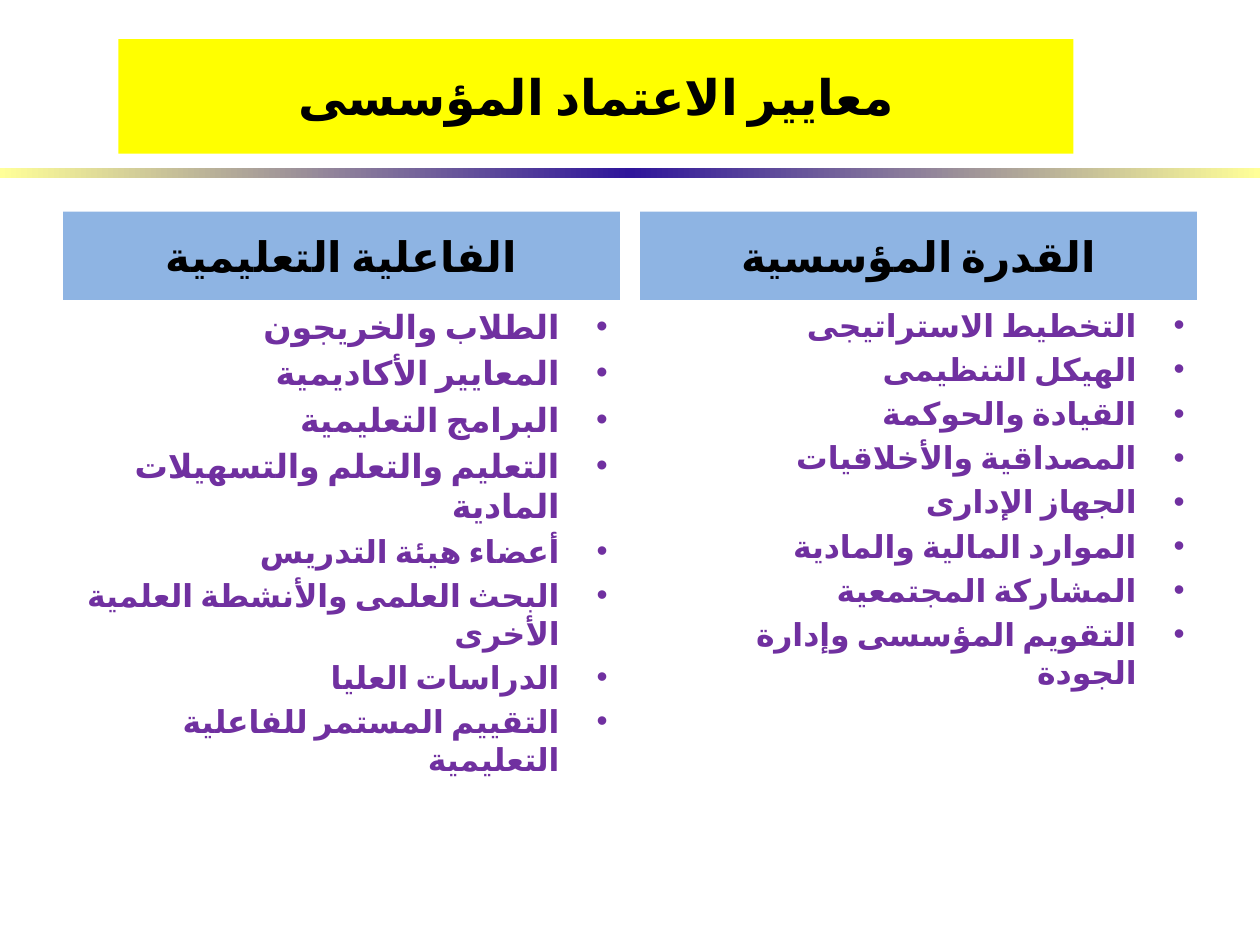
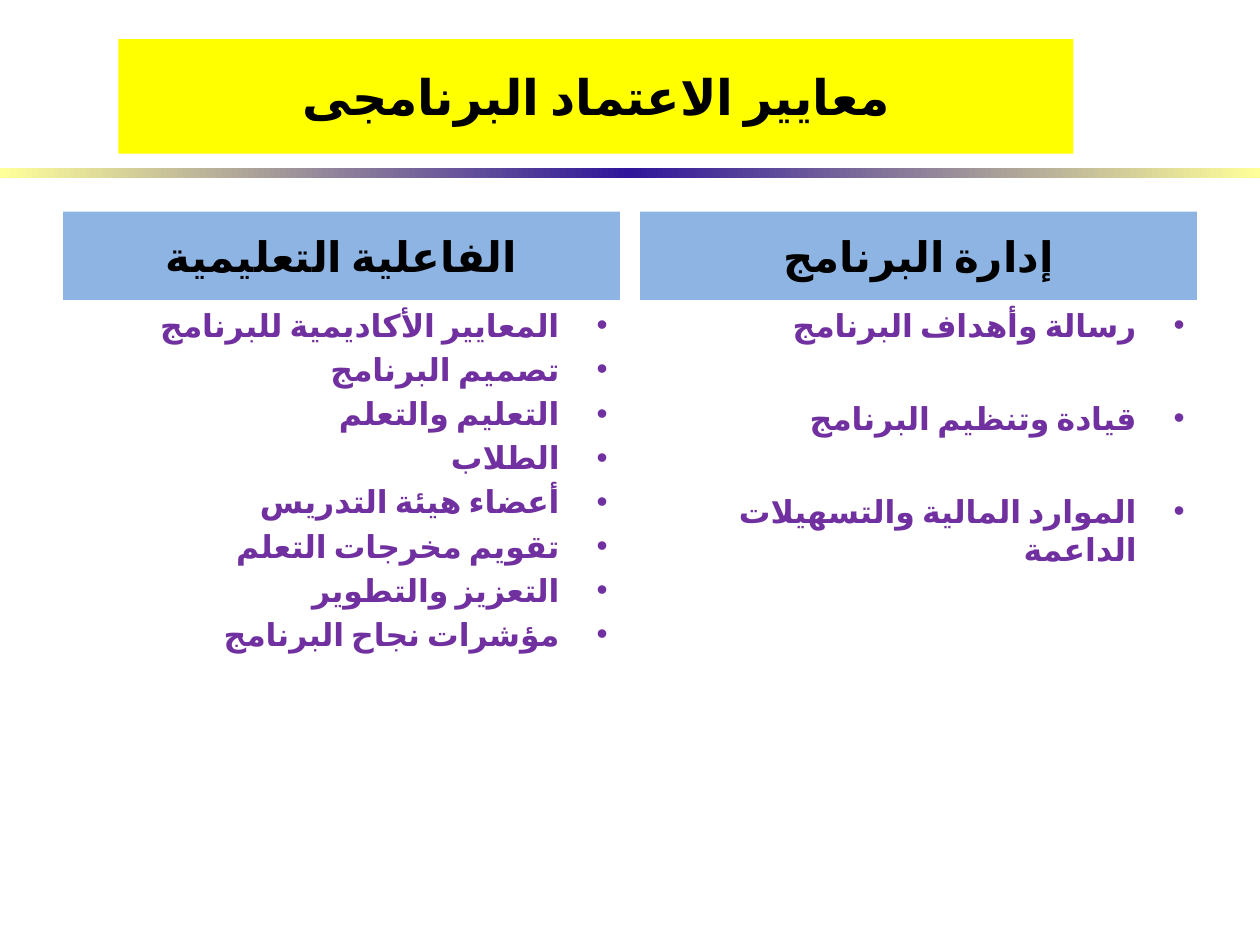
from copy import deepcopy
from dataclasses import dataclass

from lxml.etree import SubElement
from pptx import Presentation
from pptx.dml.color import RGBColor
from pptx.enum.shapes import MSO_SHAPE
from pptx.enum.text import MSO_ANCHOR, MSO_AUTO_SIZE, PP_ALIGN
from pptx.oxml.ns import qn
from pptx.util import Inches, Pt


@dataclass(frozen=True)
class Theme:
    font: str = "Calibri"
    language: str = "ar-EG"
    title_fill: str = "FFFF00"
    heading_fill: str = "8EB4E3"
    dark: str = "000000"
    item: str = "7030A0"
    rule: tuple = ("FFFF99", "2F169A", "FFFF99")
    title_size: int = 28
    heading_size: int = 24
    item_size: int = 18
    large_item_size: int = 19


@dataclass(frozen=True)
class Box:
    left: float
    top: float
    width: float
    height: float

    def emu(self):
        return [Inches(v) for v in (self.left, self.top, self.width, self.height)]


THEME = Theme()
SLIDE_W, SLIDE_H = 10, 7.5
MARGIN, GUTTER = 0.5, 0.16
COLUMN_W = (SLIDE_W - 2 * MARGIN - GUTTER) / 2
COLUMN_TOP, COLUMN_H, HEADING_H = 1.68, 5.03, 0.7
TITLE_BOX = Box(0.94, 0.31, 7.58, 0.91)
RULE_BOX = Box(0, 1.33, SLIDE_W, 0.08)
INDENT = 0.38
LINE_GAP = 0.2   # space before an item, as a share of its size
WIDE_GAP = 31.5  # points between items of a sparse list


def add_run(p, text, size, color):
    r = p.add_run()
    r.text = text
    r.font.size, r.font.bold = Pt(size), True
    r.font.color.rgb = RGBColor.from_string(color)
    r.font.name = THEME.font
    rPr = r.font._element
    rPr.set("lang", THEME.language)
    SubElement(rPr, qn("a:cs")).set("typeface", THEME.font)


def set_rtl(p, align):
    p.alignment = align
    p._p.get_or_add_pPr().set("rtl", "1")


def fill_band(sp, color, text, size):
    """Solid band with one centred line of text."""
    sp.fill.solid()
    sp.fill.fore_color.rgb = RGBColor.from_string(color)
    sp.line.fill.background()
    tf = sp.text_frame
    tf.word_wrap, tf.auto_size = True, MSO_AUTO_SIZE.NONE
    tf.vertical_anchor = MSO_ANCHOR.MIDDLE
    p = tf.paragraphs[0]
    set_rtl(p, PP_ALIGN.CENTER)
    add_run(p, text, size, THEME.dark)


def add_rect(s, box):
    sp = s.shapes.add_shape(MSO_SHAPE.RECTANGLE, *box.emu())
    sp.shadow.inherit = False
    return sp


def add_title(s, text):
    title = s.shapes.title
    title.left, title.top, title.width, title.height = TITLE_BOX.emu()
    fill_band(title, THEME.title_fill, text, THEME.title_size)


def add_rule(s):
    sp = add_rect(s, RULE_BOX)
    sp.line.fill.background()
    sp.fill.gradient()
    sp.fill.gradient_angle = 0
    stops = sp._element.spPr.find(qn("a:gradFill")).find(qn("a:gsLst"))
    stops.append(deepcopy(stops[-1]))
    for i, (stop, color) in enumerate(zip(sp.fill.gradient_stops, THEME.rule)):
        stop.position = i / 2
        stop.color.rgb = RGBColor.from_string(color)


def add_items(s, box, items, large=0, gap=None):
    """Bulleted right-to-left list; the first `large` items are a step bigger."""
    tf = s.shapes.add_textbox(*box.emu()).text_frame
    tf.word_wrap = True
    for i, item in enumerate(items):
        size = THEME.large_item_size if i < large else THEME.item_size
        p = tf.paragraphs[0] if i == 0 else tf.add_paragraph()
        set_rtl(p, PP_ALIGN.RIGHT)
        if i:
            p.space_before = Pt(gap or LINE_GAP * size)
        pPr = p._p.get_or_add_pPr()
        pPr.set("marL", str(Inches(INDENT)))
        pPr.set("indent", str(-Inches(INDENT)))
        SubElement(pPr, qn("a:buFont")).set("typeface", "Arial")
        SubElement(pPr, qn("a:buChar")).set("char", "•")
        add_run(p, item, size, THEME.item)


def add_column(s, box, heading, items, **list_style):
    band = Box(box.left, box.top, box.width, HEADING_H)
    fill_band(add_rect(s, band), THEME.heading_fill, heading, THEME.heading_size)
    body = Box(box.left, box.top + HEADING_H, box.width, box.height - HEADING_H)
    add_items(s, body, items, **list_style)


def add_standards_slide(prs, title, columns):
    s = prs.slides.add_slide(prs.slide_layouts[5])
    add_title(s, title)
    add_rule(s)
    for i, column in enumerate(columns):
        left = MARGIN + i * (COLUMN_W + GUTTER)
        add_column(s, Box(left, COLUMN_TOP, COLUMN_W, COLUMN_H), **column)


def main():
    prs = Presentation()
    prs.slide_width, prs.slide_height = Inches(SLIDE_W), Inches(SLIDE_H)

    # Institutional accreditation
    add_standards_slide(prs, "معايير الاعتماد المؤسسى", [
        dict(heading="الفاعلية التعليمية", large=4, items=[
            "الطلاب والخريجون",
            "المعايير الأكاديمية",
            "البرامج التعليمية",
            "التعليم والتعلم والتسهيلات المادية",
            "أعضاء هيئة التدريس",
            "البحث العلمى والأنشطة العلمية الأخرى",
            "الدراسات العليا",
            "التقييم المستمر للفاعلية التعليمية",
        ]),
        dict(heading="القدرة المؤسسية", items=[
            "التخطيط الاستراتيجى",
            "الهيكل التنظيمى",
            "القيادة والحوكمة",
            "المصداقية والأخلاقيات",
            "الجهاز الإدارى",
            "الموارد المالية والمادية",
            "المشاركة المجتمعية",
            "التقويم المؤسسى وإدارة الجودة",
        ]),
    ])

    # Programme accreditation
    add_standards_slide(prs, "معايير الاعتماد البرنامجى", [
        dict(heading="الفاعلية التعليمية", items=[
            "المعايير الأكاديمية للبرنامج",
            "تصميم البرنامج",
            "التعليم والتعلم",
            "الطلاب",
            "أعضاء هيئة التدريس",
            "تقويم مخرجات التعلم",
            "التعزيز والتطوير",
            "مؤشرات نجاح البرنامج",
        ]),
        dict(heading="إدارة البرنامج", gap=WIDE_GAP, items=[
            "رسالة وأهداف البرنامج",
            "قيادة وتنظيم البرنامج",
            "الموارد المالية والتسهيلات الداعمة",
        ]),
    ])
    prs.save("out.pptx")


if __name__ == "__main__":
    main()
